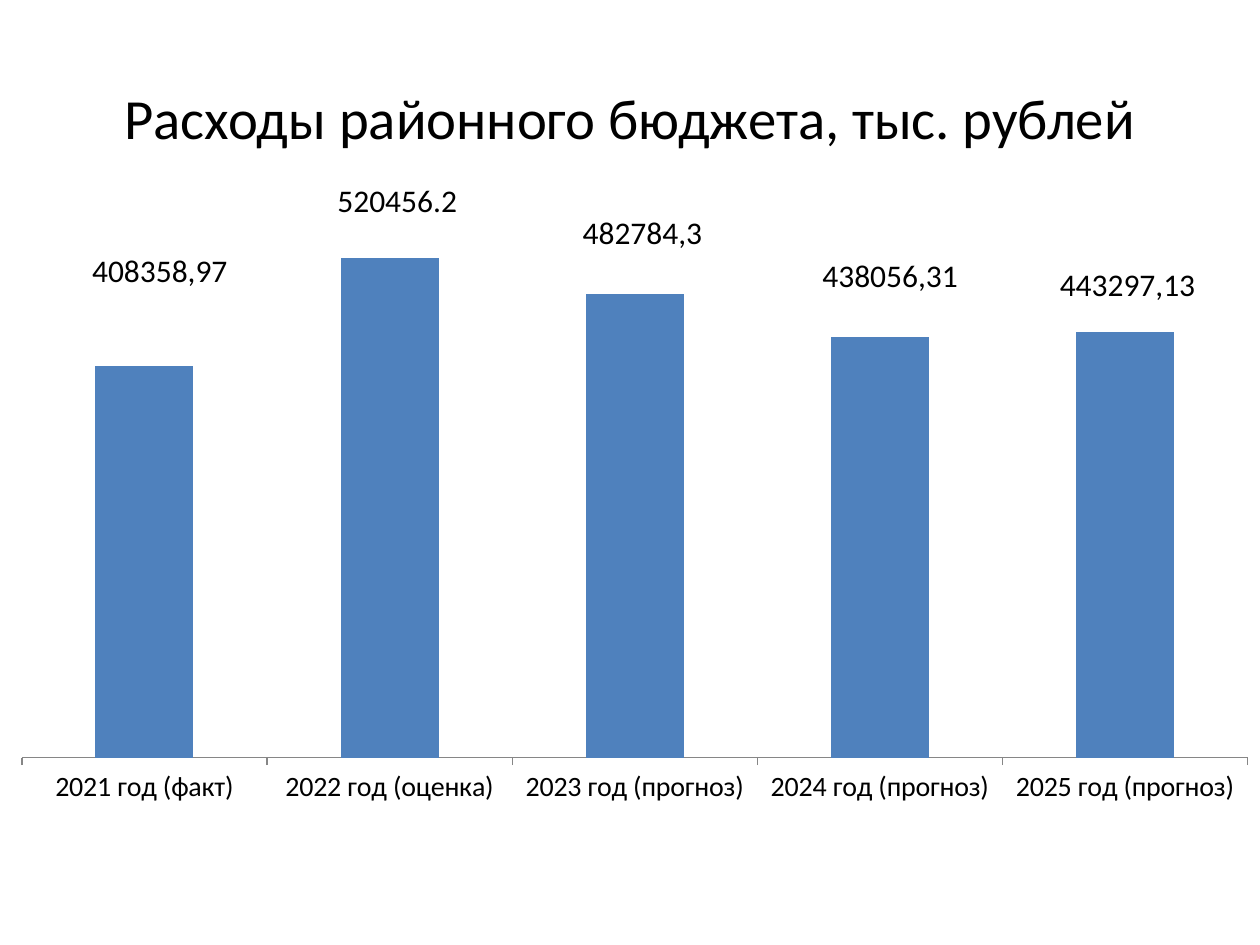
from lxml.etree import SubElement
from pptx import Presentation
from pptx.chart.data import CategoryChartData
from pptx.dml.color import RGBColor
from pptx.enum.chart import XL_CHART_TYPE as ChartType, XL_TICK_MARK as TickMark
from pptx.enum.text import MSO_ANCHOR as Anchor, PP_ALIGN as Align
from pptx.oxml import parse_xml
from pptx.oxml.ns import nsdecls, qn
from pptx.util import Pt

PX = 914400 / 126
BLACK = RGBColor(0x00, 0x00, 0x00)
BLUE = RGBColor(0x4F, 0x81, 0xBD)
GRAY = RGBColor(0x86, 0x86, 0x86)
FONT = "Calibri"
CHART_BOX = (0, 138, 1289, 767)
PLOT = {"x": 0.017, "y": 0.057, "w": 0.951, "h": 0.751}
EXPENSES = [
    ("2021 год (факт)", 408358.97, "408358,97", (16, -291)),
    ("2022 год (оценка)", 520456.2, None, (8, -306)),
    ("2023 год (прогноз)", 482784.3, "482784,3", (8, -293)),
    ("2024 год (прогноз)", 438056.31, "438056,31", (10, -271)),
    ("2025 год (прогноз)", 443297.13, "443297,13", (2, -259)),
]


def px(length):
    """Convert whole pixels to EMU."""
    return round(length * PX)


def format_font(font, size, color=BLACK):
    """Apply the slide's typeface, size and colour to a font."""
    font.name, font.size, font.bold = FONT, Pt(size), False
    font.color.rgb = color


def write_text(frame, text, *, size, color=BLACK, align=Align.CENTER):
    """Put one formatted paragraph into a text frame."""
    paragraph = frame.paragraphs[0]
    paragraph.alignment = align
    run = paragraph.add_run()
    run.text = text
    format_font(run.font, size, color)


def manual_layout(**values):
    """Build a manual chart layout from its named settings."""
    layout = parse_xml(f"<c:layout {nsdecls('c')}/>")
    manual = SubElement(layout, qn("c:manualLayout"))
    for name, value in values.items():
        SubElement(manual, qn(f"c:{name}")).set("val", str(value))
    return layout


def add_title(slide, text, box):
    """Move the title placeholder and fill it."""
    title = slide.shapes.title
    title.left, title.top, title.width, title.height = map(px, box)
    title.text_frame.vertical_anchor = Anchor.MIDDLE
    write_text(title.text_frame, text, size=32.4)


def label_bar(point, text, offset):
    """Label a bar with its value or own text, shifted from its centre."""
    label = point.data_label
    if text:
        write_text(label.text_frame, text, size=18)
    else:
        format_font(label.font, 18)
    x, y = (round(shift / side, 3) for shift, side in zip(offset, CHART_BOX[2:]))
    index = label._get_or_add_dLbl().find(qn("c:idx"))
    index.addnext(manual_layout(x=x, y=y))


def hide_leader_lines(series):
    """Switch off the lines between shifted labels and their bars."""
    labels = series.data_labels._element
    for setting in labels.findall(qn("c:showLeaderLines")):
        labels.remove(setting)
    SubElement(labels, qn("c:showLeaderLines")).set("val", "0")


def format_axes(chart):
    """Show only the category axis."""
    values, years = chart.value_axis, chart.category_axis
    values.visible = values.has_major_gridlines = False
    values.minimum_scale, values.maximum_scale = 0, 600000
    years.major_tick_mark = TickMark.OUTSIDE
    years.format.line.color.rgb = GRAY
    format_font(years.tick_labels.font, 16)


def place_plot(chart):
    """Fix the inner plot area and make the chart background clear."""
    area = chart._chartSpace.chart.plotArea
    for automatic in area.findall(qn("c:layout")):
        area.remove(automatic)
    area.insert(0, manual_layout(layoutTarget="inner", xMode="edge", yMode="edge", **PLOT))
    chart._chartSpace.chart.addnext(parse_xml(
        f"<c:spPr {nsdecls('c', 'a')}><a:noFill/><a:ln><a:noFill/></a:ln></c:spPr>"))


def add_expense_chart(slide):
    """Add the column chart of yearly expenses."""
    years, amounts, labels, offsets = zip(*EXPENSES)
    data = CategoryChartData()
    data.categories = years
    data.add_series("Series 1", amounts)
    chart = slide.shapes.add_chart(
        ChartType.COLUMN_STACKED, *map(px, CHART_BOX), data).chart
    chart.has_legend = chart.has_title = False
    format_font(chart.font, 18)
    format_axes(chart)
    place_plot(chart)
    plot = chart.plots[0]
    plot.gap_width, plot.overlap, plot.vary_by_categories = 150, 100, False
    expenses = plot.series[0]
    expenses.format.fill.solid()
    expenses.format.fill.fore_color.rgb = BLUE
    expenses.data_labels.show_value = True
    format_font(expenses.data_labels.font, 18)
    for index, (text, offset) in enumerate(zip(labels, offsets)):
        label_bar(expenses.points[index], text, offset)
    hide_leader_lines(expenses)


def main():
    """Build and save the slide."""
    deck = Presentation()
    deck.slide_width, deck.slide_height = px(1260), px(945)
    slide = deck.slides.add_slide(deck.slide_layouts[5])
    add_title(slide, "Расходы районного бюджета, тыс. рублей", (63, 38, 1134, 158))
    add_expense_chart(slide)
    deck.save("out.pptx")


if __name__ == "__main__":
    main()
